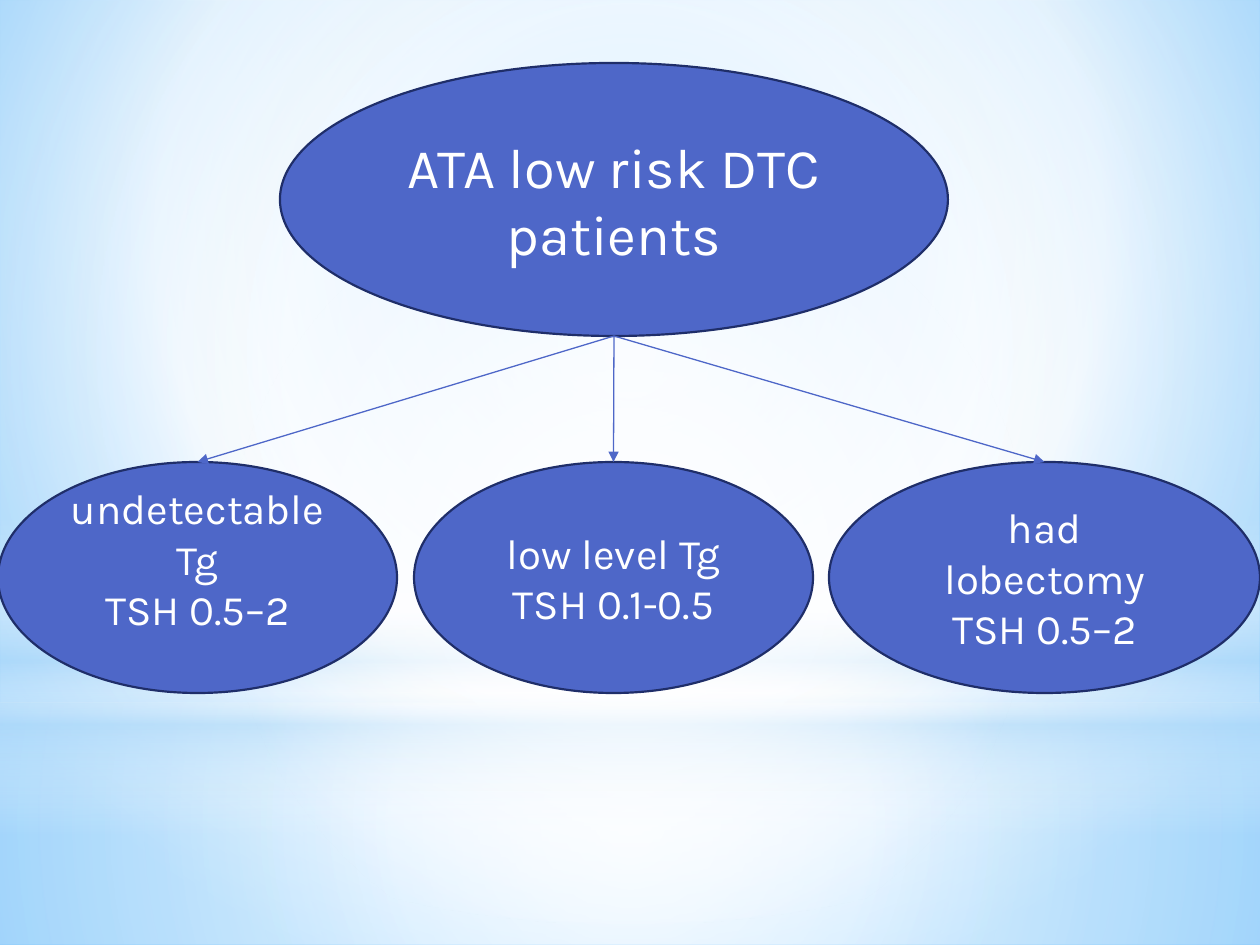
from dataclasses import dataclass

from lxml.etree import SubElement
from pptx import Presentation
from pptx.dml.color import RGBColor
from pptx.enum.shapes import MSO_CONNECTOR, MSO_SHAPE as SHAPE
from pptx.enum.text import MSO_ANCHOR, PP_ALIGN
from pptx.oxml import parse_xml
from pptx.oxml.ns import nsdecls, qn
from pptx.util import Pt

PX = 914400 / 126
COLORS = {
    "node": "4E67C8", "edge": "1F2E69", "text": "FFFFFF", "white": "FFFFFF",
    "pale": "B4DCFA", "sky": "9ED5FF", "blue": "5BB9FF",
}
FONT = "Karla"
CENTER = (50, 50, 50, 50)
Stop = tuple[int, str, int]  # position %, colour name, opacity %


@dataclass(frozen=True)
class Layer:
    shape: SHAPE
    top: int
    height: int
    stops: tuple[Stop, ...]
    focus: tuple[int, ...] | None = CENTER  # None: vertical linear gradient


@dataclass(frozen=True)
class Node:
    left: int
    top: int
    width: int
    height: int
    lines: tuple[str, ...]
    size: int = 24
    lift: int = 0  # extra bottom inset


BACKDROP = ((0, "sky", 100), (60, "white", 100), (100, "blue", 100))
LAYERS = (
    Layer(SHAPE.RECTANGLE, 703, 242,
          ((0, "white", 91), (37, "white", 76), (100, "pale", 79))),
    Layer(SHAPE.RECTANGLE, 0, 703,
          ((0, "white", 89), (48, "white", 62), (100, "pale", 79))),
    Layer(SHAPE.RECTANGLE, 519, 315,
          ((0, "white", 0), (29, "white", 30), (45, "pale", 40),
           (55, "white", 26), (65, "pale", 60), (100, "white", 0)), None),
    Layer(SHAPE.OVAL, 221, 703, ((0, "white", 100), (56, "white", 0))),
)
ROOT = Node(280, 63, 668, 273, ("ATA low risk DTC patients",), size=32)
ROW = {"top": 462, "height": 231}
GROUPS = (
    Node(left=-2, width=399, lines=("undetectable Tg", "TSH 0.5–2"), lift=38, **ROW),
    Node(left=414, width=399, lines=("low level Tg", "TSH 0.1-0.5"), **ROW),
    Node(left=829, width=431, lines=("had lobectomy", "TSH 0.5–2"), **ROW),
)


def px(n: float) -> int:
    return round(n * PX)


def rgb(name: str) -> RGBColor:
    return RGBColor.from_string(COLORS[name])


def apply_gradient(props, stops: tuple[Stop, ...], focus: tuple[int, ...] | None) -> None:
    """Swap the solid fill inside props for a gradient with opacity."""
    gs = "".join(
        f'<a:gs pos="{pos * 1000}"><a:srgbClr val="{COLORS[color]}">'
        f'<a:alpha val="{alpha * 1000}"/></a:srgbClr></a:gs>'
        for pos, color, alpha in stops)
    if focus is None:
        course = '<a:lin ang="5400000" scaled="0"/>'
    else:
        sides = " ".join(f'{k}="{v * 1000}"' for k, v in zip("ltrb", focus))
        course = f'<a:path path="circle"><a:fillToRect {sides}/></a:path>'
    grad = parse_xml(f'<a:gradFill {nsdecls("a")} rotWithShape="1">'
                     f'<a:gsLst>{gs}</a:gsLst>{course}</a:gradFill>')
    props.replace(props.find(qn("a:solidFill")), grad)


def add_layer(slide, layer: Layer) -> None:
    sp = slide.shapes.add_shape(layer.shape, 0, px(layer.top), px(1260), px(layer.height))
    sp.shadow.inherit = False
    sp.line.fill.background()
    sp.fill.solid()
    apply_gradient(sp._element.spPr, layer.stops, layer.focus)


def write(p, text: str, *, size: int, color: str = "text", align=PP_ALIGN.CENTER) -> None:
    p.alignment = align
    r = p.add_run()
    r.text = text
    r.font.name = FONT
    r.font.size = Pt(size)
    r.font.color.rgb = rgb(color)


def add_node(slide, node: Node):
    sp = slide.shapes.add_shape(SHAPE.OVAL, px(node.left), px(node.top),
                                px(node.width), px(node.height))
    sp.shadow.inherit = False
    sp.fill.solid()
    sp.fill.fore_color.rgb = rgb("node")
    sp.line.color.rgb = rgb("edge")
    sp.line.width = Pt(1.25)
    tf = sp.text_frame
    tf.word_wrap = True
    tf.vertical_anchor = MSO_ANCHOR.MIDDLE
    tf.margin_bottom += px(node.lift)
    for i, line in enumerate(node.lines):
        write(tf.add_paragraph() if i else tf.paragraphs[0], line, size=node.size)
    return sp


def add_arrow(slide, source, target) -> None:
    """Draw an arrow from the bottom of source to the top of target."""
    line = slide.shapes.add_connector(
        MSO_CONNECTOR.STRAIGHT, source.left + source.width // 2,
        source.top + source.height, target.left + target.width // 2, target.top)
    line.end_connect(target, 0)
    line.line.color.rgb = rgb("node")
    line.line.width = Pt(0.75)
    SubElement(line.line._get_or_add_ln(), qn("a:tailEnd"), type="triangle")
    SubElement(line._element.spPr, qn("a:effectLst"))


def main() -> None:
    prs = Presentation()
    prs.slide_width, prs.slide_height = px(1260), px(945)
    slide = prs.slides.add_slide(prs.slide_layouts[6])
    slide.background.fill.solid()
    apply_gradient(slide._element.find(".//" + qn("p:bgPr")), BACKDROP, (20, 10, 20, 60))
    for layer in LAYERS:
        add_layer(slide, layer)
    root = add_node(slide, ROOT)
    groups = [add_node(slide, node) for node in GROUPS]
    for group in reversed(groups):
        add_arrow(slide, root, group)
    prs.save("out.pptx")


if __name__ == "__main__":
    main()
